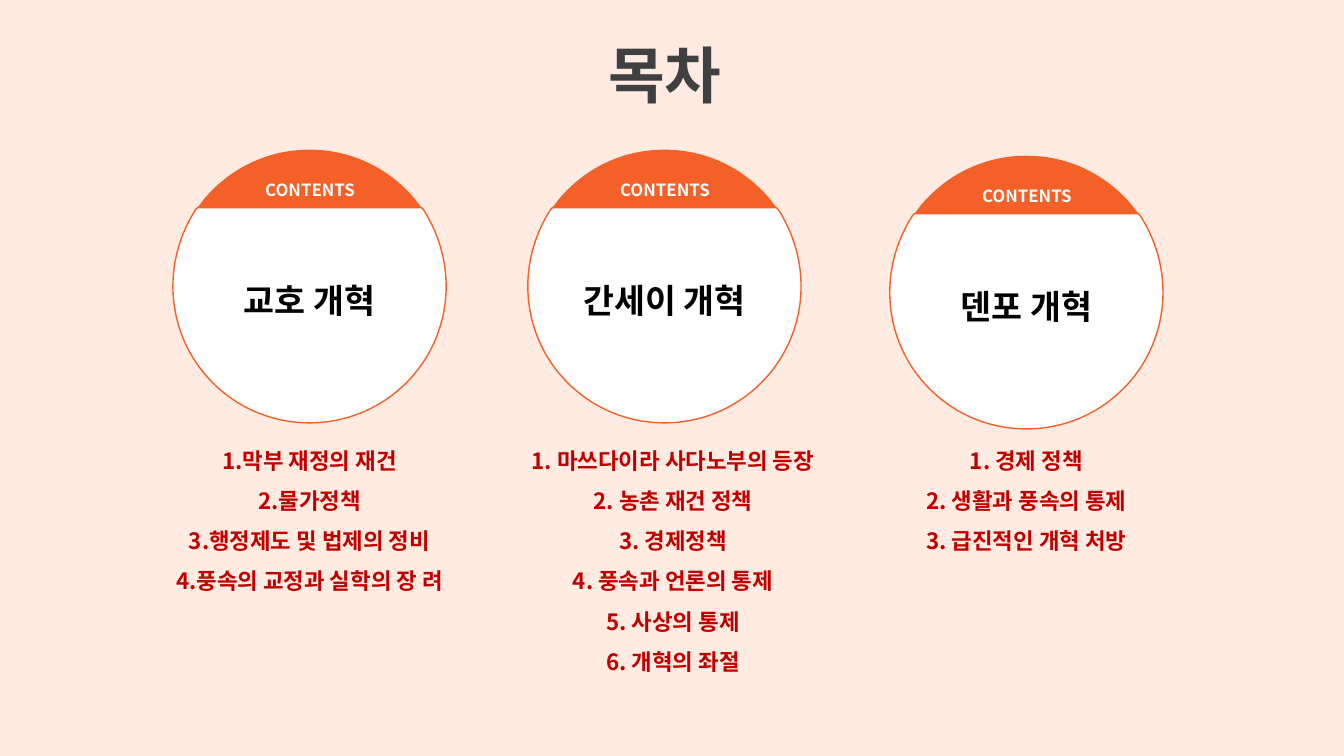
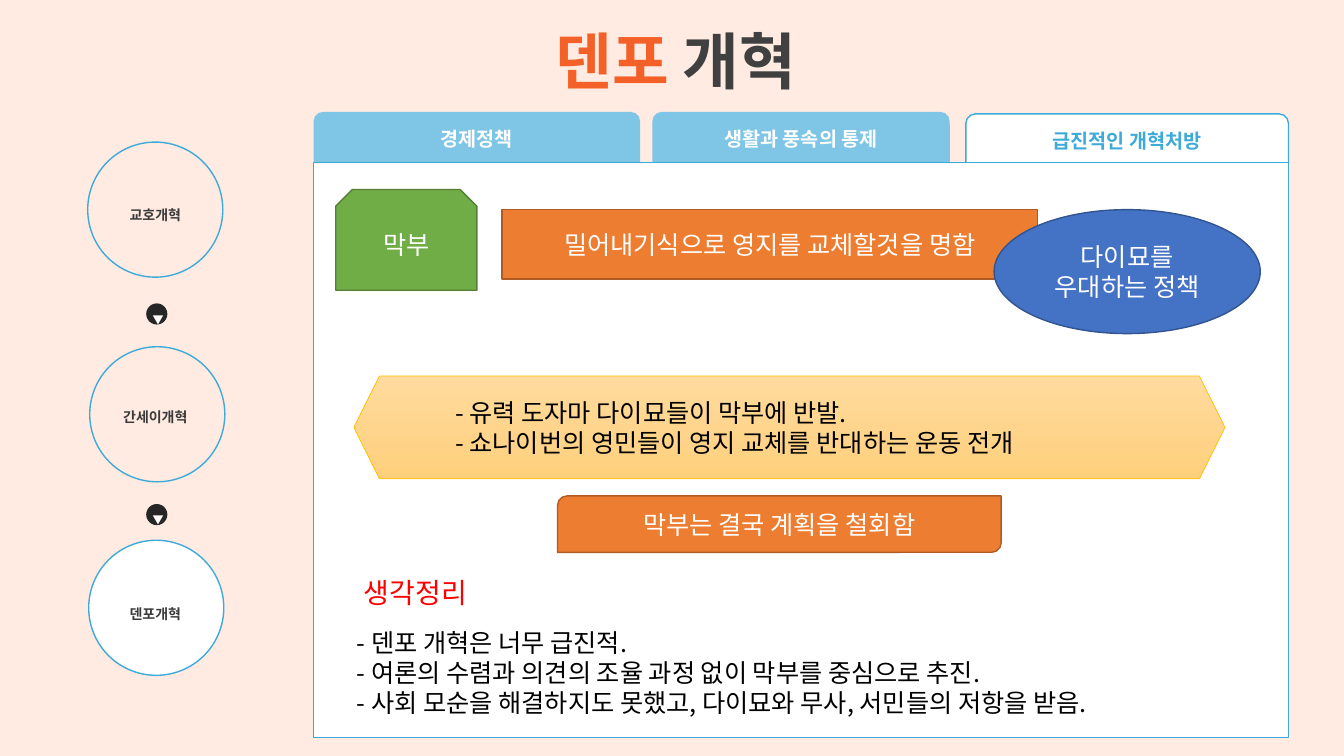
from lxml import etree
from pptx import Presentation, util as u
from pptx.dml.color import RGBColor
from pptx.enum import shapes as s, text as t
from pptx.oxml import ns

FONT = "Noto Sans CJK KR"
PINK, ORANGE, GREY, WHITE = "FFEBE2", "F46128", "404040", "FFFFFF"
BLUE, SKY, RED, BLACK, DARK = "3EAADA", "7FC6E6", "C00000", "000000", "3A3A3A"
MID, LEFT = t.PP_ALIGN.CENTER, t.PP_ALIGN.LEFT
GEO = s.MSO_SHAPE
rgb = RGBColor.from_string


def write(shape, lines, size, color, bold=True, align=MID, gap=1.0, **frame):
    """Fill a shape with paragraphs; a line is a string or (text, colour) runs."""
    tf = shape.text_frame
    for key, val in ({"word_wrap": True} | frame).items():
        setattr(tf, key, val)
    for i, line in enumerate(lines):
        para = tf.add_paragraph() if i else tf.paragraphs[0]
        para.alignment, para.line_spacing = align, gap
        for words, tint in [(line, color)] if isinstance(line, str) else line:
            run = para.add_run()
            run.text = words
            form = {"size": u.Pt(size), "bold": bold, "name": FONT}
            for key, val in form.items():
                setattr(run.font, key, val)
            run.font.color.rgb = rgb(tint)
            props = run.font._element
            props.set("kern", "0")
            etree.SubElement(props, ns.qn("a:ea")).set("typeface", FONT)


def paint(shape, fill=None, line=None, width=1):
    """Set fill and outline, without a shadow."""
    shape.shadow.inherit = False
    if fill:
        shape.fill.solid()
        shape.fill.fore_color.rgb = rgb(fill)
    else:
        shape.fill.background()
    if line:
        shape.line.color.rgb = rgb(line)
        shape.line.width = u.Pt(width)
    else:
        shape.line.fill.background()
    return shape


deck = Presentation()
deck.slide_width, deck.slide_height = u.Inches(13.33), u.Inches(7.5)
back = deck.slide_master.background.fill
back.solid()
back.fore_color.rgb = rgb(PINK)

# Slides with their titles
heads = [
    ((5.89, 0.32, 1.41, 0.84), [("목차", GREY)]),
    ((5.26, 0.18, 2.89, 0.84), [("덴포 ", ORANGE), ("개혁", GREY)]),
]
pages = []
for box, runs in heads:
    page = deck.slides.add_slide(deck.slide_layouts[5])
    title = page.shapes.title
    title.left, title.top, title.width, title.height = map(u.Inches, box)
    write(title, [runs], 44, GREY, word_wrap=False,
          vertical_anchor=t.MSO_ANCHOR.TOP, auto_size=t.MSO_AUTO_SIZE.NONE)
    pages.append(page.shapes)
toc, main = pages

# Disc outlines around the centre: one point is a line, three are a curve
R = 2.71 / 2
cap = [
    [(0, -R)],
    [(0.43, -R), (0.8, -1.16), (1.05, -0.86)],
    [(1.11, -0.78)], [(-1.11, -0.78)], [(-1.05, -0.86)],
    [(-0.8, -1.16), (-0.43, -R), (0, -R)],
]
bowl = [
    [(-1.11, -0.78)], [(1.11, -0.78)], [(1.13, -0.76)],
    [(1.27, -0.54), (R, -0.28), (R, 0)],
    [(R, 0.75), (0.75, R), (0, R)],
    [(-0.75, R), (-R, 0.75), (-R, 0)],
    [(-R, -0.28), (-1.27, -0.54), (-1.13, -0.76)],
]

# Contents: a two-part disc above each list
topics = [
    (3.07, 2.84, "교호 개혁", (1.38, 3.38, 1.72),
     ["1.막부 재정의 재건", "2.물가정책", "3.행정제도 및 법제의 정비",
      "4.풍속의 교정과 실학의 장 려"]),
    (6.59, 2.84, "간세이 개혁", (4.99, 3.37, 2.52),
     ["1. 마쓰다이라 사다노부의 등장", "2. 농촌 재건 정책", "3. 경제정책",
      "4. 풍속과 언론의 통제", "5. 사상의 통제", "6. 개혁의 좌절"]),
    (10.18, 2.9, "덴포 개혁", (8.75, 2.86, 1.31),
     ["1. 경제 정책", "2. 생활과 풍속의 통제", "3. 급진적인 개혁 처방"]),
]
for cx, cy, name, (x, w, h), items in topics:
    for parts, fill, line in ((cap, ORANGE, None), (bowl, WHITE, ORANGE)):
        dots = [(u.Inches(cx + px), u.Inches(cy + py))
                for part in parts for px, py in part]
        pen = toc.build_freeform(*dots[0])
        pen.add_line_segments(dots[1:], close=True)
        disc = paint(pen.convert_to_shape(), fill, line)
        legs = iter(list(disc._element.iter(ns.qn("a:lnTo"))))
        for part in parts[1:]:
            group = [next(legs) for _ in part]
            if len(group) == 3:
                curve = etree.Element(ns.qn("a:cubicBezTo"))
                group[0].addprevious(curve)
                for leg in group:
                    curve.append(leg[0])
                    leg.getparent().remove(leg)
    write(disc, [name], 24, BLACK, margin_bottom=u.Inches(0.35),
          vertical_anchor=t.MSO_ANCHOR.MIDDLE)
    label = toc.add_textbox(*map(u.Inches, (cx - 0.54, cy - 1.21, 1.09, 0.36)))
    write(label, ["CONTENTS"], 12, WHITE, gap=1.5, word_wrap=False)
    menu = toc.add_textbox(*map(u.Inches, (x, 4.25, w, h)))
    write(menu, items, 16, RED, gap=1.5)

# Tabs and panel
tabs = [
    (3.11, 1.11, 3.24, "경제정책", SKY, None, WHITE),
    (6.47, 1.11, 2.95, "생활과 풍속의 통제", SKY, None, WHITE),
    (9.58, 1.13, 3.2, "급진적인 개혁처방", WHITE, BLUE, BLUE),
]
for x, y, w, name, fill, line, ink in tabs:
    tab = main.add_shape(GEO.ROUND_2_SAME_RECTANGLE,
                         *map(u.Inches, (x, y, w, 0.5)))
    tab.adjustments[0] = 0.19
    write(paint(tab, fill, line), [name], 14, ink)
panel = main.add_shape(GEO.RECTANGLE, *map(u.Inches, (3.11, 1.61, 9.67, 5.71)))
paint(panel, WHITE, BLUE)

# Steps on the left
steps = [
    (0.87, 1.41, None, "교호개혁", 1.92),
    (0.89, 3.44, None, "간세이개혁", 3.92),
    (0.88, 5.36, WHITE, "덴포개혁", 5.87),
]
for x, y, fill, name, top in steps:
    ring = main.add_shape(GEO.OVAL, *map(u.Inches, (x, y, 1.34, 1.34)))
    paint(ring, fill, BLUE)
    label = main.add_textbox(*map(u.Inches, (0.94, top, 1.2, 0.32)))
    write(label, [name], 10, DARK, gap=1.5)
for y in (3.01, 5):
    badge = main.add_group_shape().shapes
    dot = badge.add_shape(GEO.OVAL, *map(u.Inches, (1.45, y, 0.21, 0.21)))
    paint(dot, "262626")
    mark = badge.add_textbox(*map(u.Inches, (1.48, y, 0.17, 0.24)))
    mark.rotation = 90
    write(mark, ["▶"], 8, WHITE)

# Summary
note = main.add_group_shape().shapes
body = note.add_textbox(*map(u.Inches, (3.33, 6.17, 9.23, 1.01)))
write(body, ["- 덴포 개혁은 너무 급진적.",
             "- 여론의 수렴과 의견의 조율 과정 없이 막부를 중심으로 추진.",
             "- 사회 모순을 해결하지도 못했고, 다이묘와 무사, 서민들의 저항을 받음."],
      18, BLACK, bold=False, align=LEFT, margin_left=u.Inches(0.21))
head = note.add_textbox(*map(u.Inches, (3.51, 5.66, 3.51, 0.44)))
write(head, ["생각정리"], 20, "FF0000", bold=False, align=LEFT)

# Backlash
hexa = main.add_shape(GEO.HEXAGON, *map(u.Inches, (3.51, 3.73, 8.64, 1.02)))
paint(hexa, None, "FFC000", 0.5)
hexa.fill.gradient()
hexa.fill.gradient_angle = 270
for stop, tint in zip(hexa.fill.gradient_stops, ("FFDB9E", "FFD07C")):
    stop.color.rgb = rgb(tint)
write(hexa, ["- 유력 도자마 다이묘들이 막부에 반발.",
             "- 쇼나이번의 영민들이 영지 교체를 반대하는 운동 전개"],
      18, BLACK, bold=False, align=LEFT, margin_left=u.Inches(0.2))

# Course of the reform
blocks = [
    (GEO.ROUND_2_DIAG_RECTANGLE, (5.53, 4.92, 4.4, 0.56), "ED7D31", "AF5C24",
     ["막부는 결국 계획을 철회함"]),
    (GEO.SNIP_2_SAME_RECTANGLE, (3.33, 1.88, 1.4, 1), "70AD47", "538035",
     ["막부"]),
    (GEO.RECTANGLE, (4.98, 2.08, 5.31, 0.69), "ED7D31", "AF5C24",
     ["밀어내기식으로 영지를 교체할것을 명함"]),
    (GEO.OVAL, (9.86, 2.08, 2.64, 1.23), "4472C4", "325491",
     ["다이묘를", "우대하는 정책"]),
]
for kind, box, fill, line, lines in blocks:
    block = main.add_shape(kind, *map(u.Inches, box))
    write(paint(block, fill, line), lines, 18, WHITE, bold=False)

deck.save("out.pptx")
